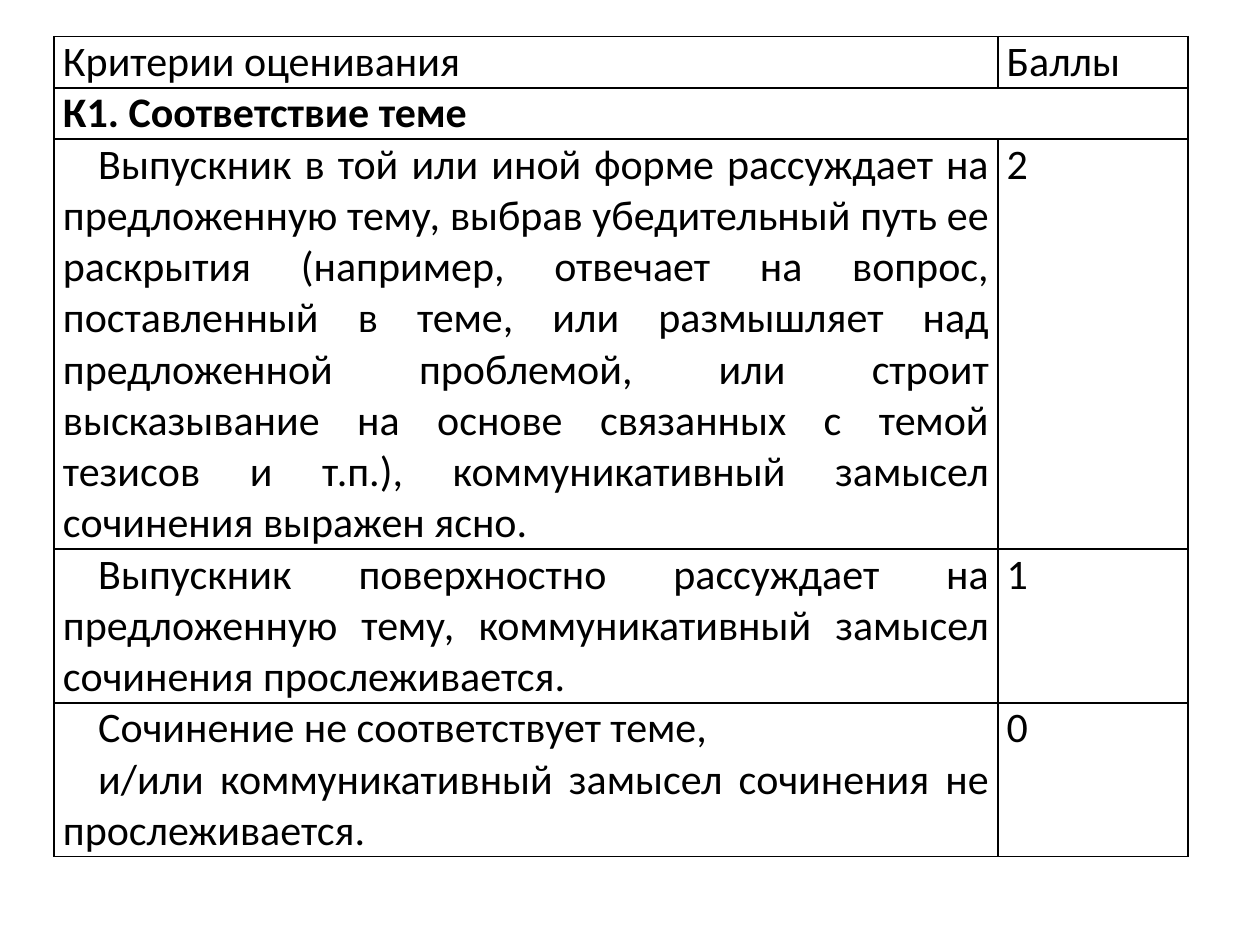
from lxml import etree
from pptx import Presentation
from pptx.dml.color import RGBColor
from pptx.enum import text
from pptx.oxml import ns
from pptx.util import Inches, Pt

BLACK = "000000"
LINE_HEIGHT = 0.4


def write_cell(cell, content, bold=False, indent=0):
    """Fill a cell with one paragraph per line of content and black borders."""
    cell.margin_left = cell.margin_right = Inches(0.07)
    cell.margin_top = cell.margin_bottom = 0
    cell.text = content
    for paragraph in cell.text_frame.paragraphs:
        paragraph.alignment = text.PP_ALIGN.JUSTIFY
        if indent:
            properties = paragraph._p.get_or_add_pPr()
            properties.set("marL", "0")
            properties.set("indent", str(Inches(indent)))
        font = paragraph.runs[0].font
        font.name, font.size, font.bold = "Calibri", Pt(24), bold
        font.color.rgb = RGBColor.from_string(BLACK)

    cell.fill.background()
    cell_properties = cell._tc.get_or_add_tcPr()
    for position, side in enumerate(("lnL", "lnR", "lnT", "lnB")):
        border = etree.Element(ns.qn(f"a:{side}"), w=str(Pt(1)))
        solid = etree.SubElement(border, ns.qn("a:solidFill"))
        etree.SubElement(solid, ns.qn("a:srgbClr"), val=BLACK)
        cell_properties.insert(position, border)


prs = Presentation()
prs.slide_width, prs.slide_height = Inches(10), Inches(7.5)
slide = prs.slides.add_slide(prs.slide_layouts[6])

# Criterion, points and number of text lines
levels = [
    ("Выпускник в той или иной форме рассуждает на предложенную тему, выбрав "
     "убедительный путь ее раскрытия (например, отвечает на вопрос, поставленный "
     "в теме, или размышляет над предложенной проблемой, или строит высказывание "
     "на основе связанных с темой тезисов и т.п.), коммуникативный замысел "
     "сочинения выражен ясно.", "2", 8),
    ("Выпускник поверхностно рассуждает на предложенную тему, коммуникативный "
     "замысел сочинения прослеживается.", "1", 3),
    ("Сочинение не соответствует теме,\n"
     "и/или коммуникативный замысел сочинения не прослеживается.", "0", 3),
]

# Table grid
line_counts = [1, 1] + [lines for _, _, lines in levels]
criteria = slide.shapes.add_table(
    len(line_counts), 2, Inches(0.43), Inches(0.29),
    Inches(9), Inches(LINE_HEIGHT * sum(line_counts))).table
criteria.first_row = criteria.horz_banding = False
for column, width in zip(criteria.columns, (7.49, 1.51)):
    column.width = Inches(width)
for row, lines in zip(criteria.rows, line_counts):
    row.height = Inches(LINE_HEIGHT * lines)

# Header and criterion title
write_cell(criteria.cell(0, 0), "Критерии оценивания")
write_cell(criteria.cell(0, 1), "Баллы")
criteria.cell(1, 0).merge(criteria.cell(1, 1))
write_cell(criteria.cell(1, 0), "К1. Соответствие теме", bold=True)

# Levels with their points
for row, (description, points, _) in enumerate(levels, start=2):
    write_cell(criteria.cell(row, 0), description, indent=0.28)
    write_cell(criteria.cell(row, 1), points)

prs.save("out.pptx")
